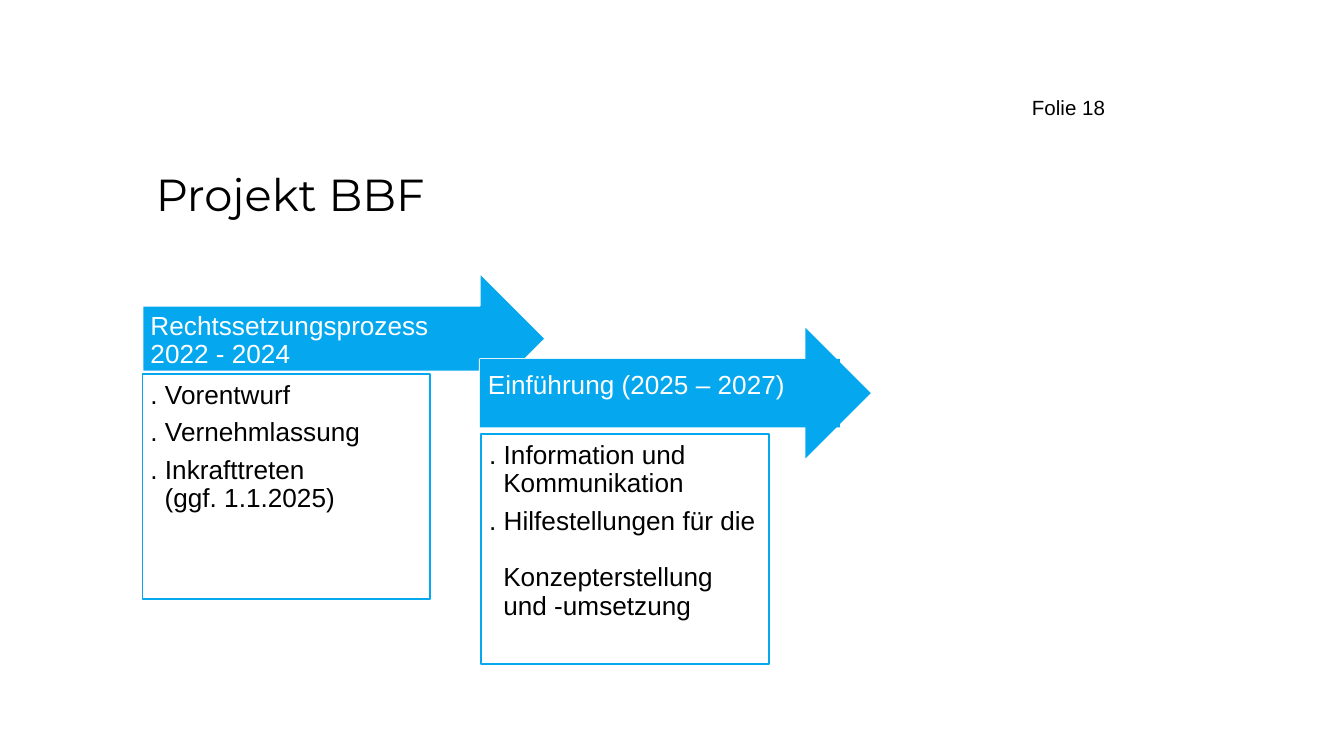
from dataclasses import dataclass

from lxml import etree
from pptx import Presentation
from pptx.dml.color import RGBColor
from pptx.enum.shapes import MSO_SHAPE
from pptx.enum.text import MSO_ANCHOR, MSO_AUTO_SIZE, PP_ALIGN
from pptx.oxml.ns import qn
from pptx.util import Emu, Pt

RIGHT_ARROW, RECTANGLE = MSO_SHAPE.RIGHT_ARROW, MSO_SHAPE.RECTANGLE
TOP, MIDDLE = MSO_ANCHOR.TOP, MSO_ANCHOR.MIDDLE
LEFT = PP_ALIGN.LEFT
NO_AUTOFIT = MSO_AUTO_SIZE.NONE
PX = 4572  # 200 px to the inch
HANGING = 21
COLORS = {"blue": "05A8EE", "white": "FFFFFF", "black": "000000"}
LIST_INSETS = (12, 12, 12, 12)
LABEL_INSETS = (12, 12, 56, 32)
DEFAULT_INSETS = (20, 10, 20, 10)


@dataclass(frozen=True)
class Box:
    left: int
    top: int
    width: int
    height: int

    def emu(self) -> tuple:
        return tuple(Emu(px * PX) for px in (self.left, self.top, self.width, self.height))


@dataclass(frozen=True)
class Item:
    text: str
    hanging: bool = True
    space_before: int = 0


@dataclass(frozen=True)
class Phase:
    label: str
    arrow: Box
    label_box: Box
    label_anchor: MSO_ANCHOR
    label_filled: bool
    list_box: Box
    items: tuple[Item, ...]


PHASES = (
    Phase("Rechtssetzungsprozess 2022 - 2024",
          Box(212, 406, 600, 196), Box(212, 454, 550, 98), TOP, False,
          Box(212, 556, 428, 336),
          (Item(". Vorentwurf"), Item(". Vernehmlassung"),
           Item(". Inkrafttreten\v(ggf. 1.1.2025)"))),
    Phase("Einführung (2025 – 2027)",
          Box(714, 484, 584, 202), Box(714, 534, 536, 102), MIDDLE, True,
          Box(716, 646, 428, 342),
          (Item(". Information und\vKommunikation"),
           Item(". Hilfestellungen für die"),
           Item("Konzepterstellung\vund -umsetzung", hanging=False, space_before=10))),
)


def rgb(name: str) -> RGBColor:
    return RGBColor.from_string(COLORS[name])


def place(shape, box: Box) -> None:
    shape.left, shape.top, shape.width, shape.height = box.emu()


def paint(shape, fill: str, line: str | None = None) -> None:
    shape.fill.solid()
    shape.fill.fore_color.rgb = rgb(fill)
    if line:
        shape.line.color.rgb = rgb(line)
        shape.line.width = Pt(1)
    else:
        shape.line.fill.background()


def set_frame(shape, insets: tuple = DEFAULT_INSETS, anchor: MSO_ANCHOR = TOP):
    frame = shape.text_frame
    frame.word_wrap = True
    frame.auto_size = NO_AUTOFIT
    frame.vertical_anchor = anchor
    (frame.margin_left, frame.margin_top,
     frame.margin_right, frame.margin_bottom) = (Emu(px * PX) for px in insets)
    return frame


def write(paragraph, text: str, *, size: int = 14, color: str = "black",
          font: str = "Arial", line_spacing: float = 0.9,
          space_before: int = 0, space_after: int = 5) -> None:
    paragraph.text = text
    paragraph.alignment = LEFT
    paragraph.line_spacing = line_spacing
    paragraph.space_before = Pt(space_before)
    paragraph.space_after = Pt(space_after)
    for run in paragraph.runs:
        run.font.name = font
        run.font.size = Pt(size)
        run.font.color.rgb = rgb(color)


def set_indent(paragraph, hanging: bool) -> None:
    """Replace the template's bullet by an indent that aligns the lines."""
    properties = paragraph._p.get_or_add_pPr()
    properties.set("marL", str(HANGING * PX))
    properties.set("indent", str(-HANGING * PX if hanging else 0))
    etree.SubElement(properties, qn("a:buNone"))


def fill_list(placeholder, box: Box, items: tuple[Item, ...]) -> None:
    place(placeholder, box)
    paint(placeholder, "white", "blue")
    frame = set_frame(placeholder, LIST_INSETS)
    for index, item in enumerate(items):
        paragraph = frame.add_paragraph() if index else frame.paragraphs[0]
        set_indent(paragraph, item.hanging)
        write(paragraph, item.text, space_before=item.space_before)


def add_shape(slide, kind: MSO_SHAPE, box: Box):
    shape = slide.shapes.add_shape(kind, *box.emu())
    shape.shadow.inherit = False
    return shape


def draw_phase(slide, phase: Phase, placeholder) -> None:
    fill_list(placeholder, phase.list_box, phase.items)
    paint(add_shape(slide, RIGHT_ARROW, phase.arrow), "blue", "white")
    if phase.label_filled:
        label = add_shape(slide, RECTANGLE, phase.label_box)
        paint(label, "blue")
    else:
        label = slide.shapes.add_textbox(*phase.label_box.emu())
    frame = set_frame(label, LABEL_INSETS, phase.label_anchor)
    write(frame.paragraphs[0], phase.label, color="white")


def main() -> None:
    presentation = Presentation()
    presentation.slide_width, presentation.slide_height = Emu(2000 * PX), Emu(1125 * PX)
    two_lists = presentation.slide_layouts[3]
    slide = presentation.slides.add_slide(two_lists)
    title, *lists = slide.placeholders

    place(title, Box(212, 238, 1700, 88))
    write(set_frame(title).paragraphs[0], "Projekt BBF", size=24,
          font="Montserrat", line_spacing=1.0, space_after=0)

    page_number = slide.shapes.add_textbox(*Box(1516, 132, 300, 58).emu())
    write(set_frame(page_number).paragraphs[0], "Folie 18", size=11,
          line_spacing=1.0, space_after=0)

    for phase, placeholder in zip(PHASES, lists):
        draw_phase(slide, phase, placeholder)
    presentation.save("out.pptx")


if __name__ == "__main__":
    main()
